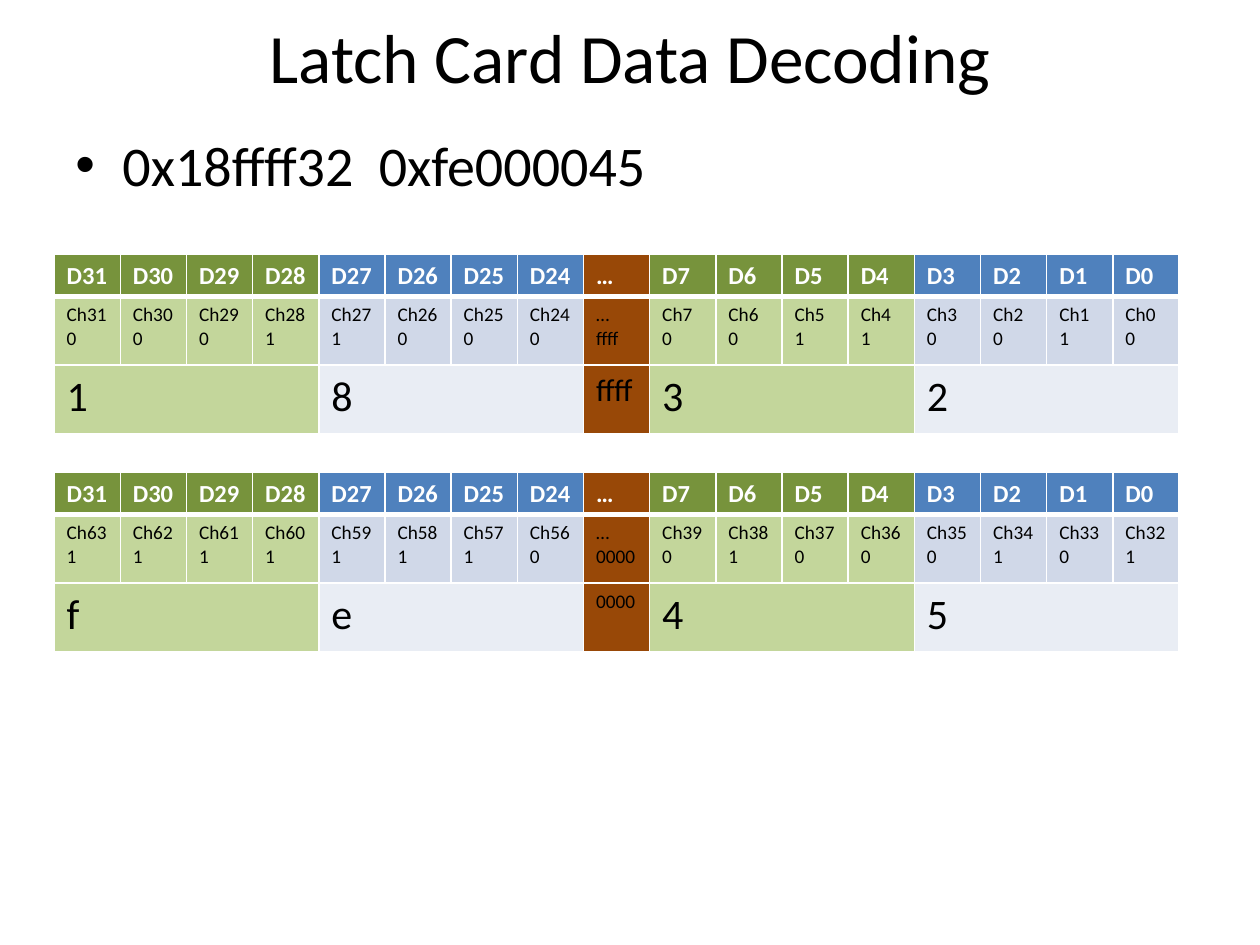
from lxml import etree
from pptx import Presentation
from pptx.dml.color import RGBColor
from pptx.enum import text as t
from pptx.oxml import ns
from pptx.util import Cm, Pt

BLACK = RGBColor(0x00, 0x00, 0x00)
WHITE = RGBColor(0xFF, 0xFF, 0xFF)
BROWN = RGBColor(0x98, 0x48, 0x07)
GREEN = RGBColor(0x77, 0x93, 0x3C)
LIGHT_GREEN = RGBColor(0xC3, 0xD6, 0x9B)
BLUE = RGBColor(0x4F, 0x81, 0xBD)
LIGHT_BLUE = RGBColor(0xD0, 0xD8, 0xE8)
PALE_BLUE = RGBColor(0xE9, 0xED, 0xF4)

TITLE = "Latch Card Data Decoding"
WORDS = "0x18ffff32  0xfe000045"
GREEN_GROUP = (GREEN, LIGHT_GREEN, LIGHT_GREEN)
BLUE_GROUP = (BLUE, LIGHT_BLUE, PALE_BLUE)
NIBBLES = [
    (0, 31, GREEN_GROUP),
    (4, 27, BLUE_GROUP),
    (9, 7, GREEN_GROUP),
    (13, 3, BLUE_GROUP),
]
MIDDLE_COLUMN = 8
COLUMN_COUNT = 17
TABLES = [
    {"top": 5.13, "digits": "1832", "middle": "ffff", "middle_size": 18, "first_channel": 0},
    {"top": 9.53, "digits": "fe45", "middle": "0000", "middle_size": 11, "first_channel": 32},
]
TABLE_LEFT, TABLE_WIDTH = 1.09, 22.68
ROW_HEIGHTS = (0.84, 1.38, 1.38)


def write(frame, lines, size, color=BLACK, bold=False, align=t.PP_ALIGN.LEFT):
    frame.word_wrap = True
    for index, line in enumerate(lines):
        paragraph = frame.paragraphs[0] if index == 0 else frame.add_paragraph()
        paragraph.alignment = align
        run = paragraph.add_run()
        run.text = line
        run.font.name = "Calibri"
        run.font.size = Pt(size)
        run.font.bold = bold
        run.font.color.rgb = color


def add_text(slide, left, top, width, height, lines, **formatting):
    box = slide.shapes.add_textbox(Cm(left), Cm(top), Cm(width), Cm(height))
    write(box.text_frame, lines, **formatting)
    return box.text_frame


def set_bullet(paragraph):
    properties = paragraph._p.get_or_add_pPr()
    properties.set("marL", str(Cm(0.95)))
    properties.set("indent", str(-Cm(0.95)))
    etree.SubElement(properties, ns.qn("a:buFont"), typeface="Arial")
    etree.SubElement(properties, ns.qn("a:buChar"), char="•")


def set_borders(cell, row):
    properties = cell._tc.get_or_add_tcPr()
    widths = {"L": 1, "R": 1, "T": 3 if row == 1 else 1, "B": 3 if row == 0 else 1}
    for index, (side, width) in enumerate(widths.items()):
        line = etree.Element(ns.qn(f"a:ln{side}"), w=str(Pt(width)))
        fill = etree.SubElement(line, ns.qn("a:solidFill"))
        etree.SubElement(fill, ns.qn("a:srgbClr"), val=str(WHITE))
        properties.insert(index, line)


def fill_column(table, column, colors, header, lines):
    for row, color in enumerate(colors):
        cell = table.cell(row, column)
        cell.fill.solid()
        cell.fill.fore_color.rgb = color
        set_borders(cell, row)
    write(table.cell(0, column).text_frame, [header], size=14, color=WHITE, bold=True)
    write(table.cell(1, column).text_frame, lines, size=11)


def add_bit_table(slide, top, digits, middle, middle_size, first_channel):
    frame = slide.shapes.add_table(
        len(ROW_HEIGHTS), COLUMN_COUNT,
        Cm(TABLE_LEFT), Cm(top), Cm(TABLE_WIDTH), Cm(sum(ROW_HEIGHTS)))
    table = frame.table
    table.horz_banding = False
    for row, height in zip(table.rows, ROW_HEIGHTS):
        row.height = Cm(height)
    for digit, (start, high_bit, colors) in zip(digits, NIBBLES):
        for offset, value in enumerate(f"{int(digit, 16):04b}"):
            bit = high_bit - offset
            fill_column(table, start + offset, colors, f"D{bit}",
                        [f"Ch{first_channel + bit}", value])
        table.cell(2, start).merge(table.cell(2, start + 3))
        write(table.cell(2, start).text_frame, [digit], size=24)
    fill_column(table, MIDDLE_COLUMN, (BROWN,) * 3, "…", ["…", middle])
    write(table.cell(2, MIDDLE_COLUMN).text_frame, [middle], size=middle_size)


def main():
    presentation = Presentation()
    presentation.slide_width, presentation.slide_height = Cm(25.4), Cm(19.05)
    slide = presentation.slides.add_slide(presentation.slide_layouts[6])

    title = add_text(slide, 1.27, 0.33, 22.86, 1.6, [TITLE],
                     size=39.6, align=t.PP_ALIGN.CENTER)
    title.vertical_anchor = t.MSO_ANCHOR.MIDDLE

    body = add_text(slide, 1.27, 2.51, 22.86, 14.5, [WORDS], size=32)
    body.paragraphs[0].space_before = Pt(6.4)
    set_bullet(body.paragraphs[0])

    for table in TABLES:
        add_bit_table(slide, **table)
    presentation.save("out.pptx")


if __name__ == "__main__":
    main()
